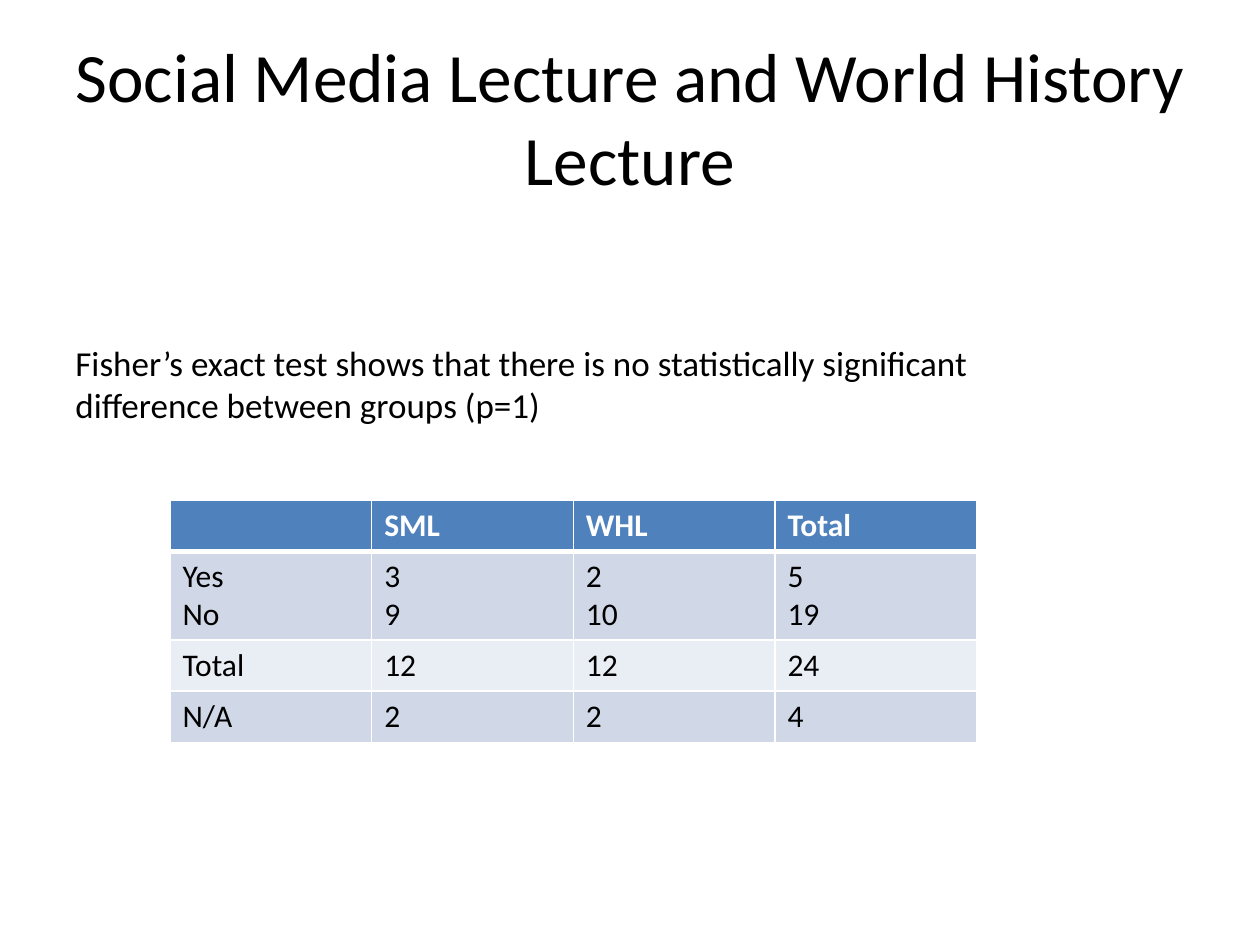
from lxml import etree
from pptx import Presentation
from pptx.dml.color import RGBColor
from pptx.enum.text import MSO_ANCHOR, PP_ALIGN
from pptx.oxml.ns import qn
from pptx.util import Pt

FONT = "Calibri"
BLACK, WHITE = "000000", "FFFFFF"
HEADER_FILL = "4F81BD"
BAND_FILLS = ("D0D8E8", "E9EDF4")
LEFT, CENTER = PP_ALIGN.LEFT, PP_ALIGN.CENTER
TOP, MIDDLE = MSO_ANCHOR.TOP, MSO_ANCHOR.MIDDLE

TITLE = "Social Media Lecture and World History Lecture"
FINDING = (
    "Fisher’s exact test shows that there is no statistically significant "
    "difference between groups (p=1)"
)
COUNTS = [
    ["", "SML", "WHL", "Total"],
    ["Yes\nNo", "3\n9", "2\n10", "5\n19"],
    ["Total", "12", "12", "24"],
    ["N/A", "2", "2", "4"],
]
ROW_HEIGHTS = [29.2, 50.8, 29.2, 29.2]


def color(hex_value):
    return RGBColor.from_string(hex_value)


def write(frame, text, size, hex_value, bold=False, align=LEFT):
    frame.text = text
    for paragraph in frame.paragraphs:
        paragraph.alignment = align
        for run in paragraph.runs:
            run.font.name = FONT
            run.font.size = Pt(size)
            run.font.bold = bold
            run.font.color.rgb = color(hex_value)


def add_text(slide, box, text, size, align=LEFT, anchor=TOP):
    frame = slide.shapes.add_textbox(*map(Pt, box)).text_frame
    frame.word_wrap = True
    frame.vertical_anchor = anchor
    write(frame, text, size, BLACK, align=align)


def set_borders(cell, widths):
    properties = cell._tc.get_or_add_tcPr()
    for side, width in widths.items():
        line = etree.SubElement(properties, qn(f"a:ln{side}"), w=str(Pt(width)))
        fill = etree.SubElement(line, qn("a:solidFill"))
        etree.SubElement(fill, qn("a:srgbClr"), val=WHITE)


def add_counts(slide, box):
    left, top, width, height = map(Pt, box)
    table = slide.shapes.add_table(
        len(COUNTS), len(COUNTS[0]), left, top, width, height
    ).table
    for row, row_height in zip(table.rows, ROW_HEIGHTS):
        row.height = Pt(row_height)
    for r, values in enumerate(COUNTS):
        header = r == 0
        for c, value in enumerate(values):
            cell = table.cell(r, c)
            set_borders(
                cell,
                {"L": 1, "R": 1, "T": 3 if r == 1 else 1, "B": 3 if header else 1},
            )
            cell.fill.solid()
            cell.fill.fore_color.rgb = color(
                HEADER_FILL if header else BAND_FILLS[(r - 1) % 2]
            )
            write(cell.text_frame, value, 18, WHITE if header else BLACK, bold=header)


def main():
    presentation = Presentation()
    presentation.slide_width, presentation.slide_height = Pt(720), Pt(540)
    slide = presentation.slides.add_slide(presentation.slide_layouts[6])
    add_text(slide, (36, 21.6, 648, 90), TITLE, 39.6, CENTER, MIDDLE)
    add_counts(slide, (97.2, 285.8, 460.8, sum(ROW_HEIGHTS)))
    add_text(slide, (36, 191.5, 533.5, 55.4), FINDING, 20)
    presentation.save("out.pptx")


if __name__ == "__main__":
    main()
